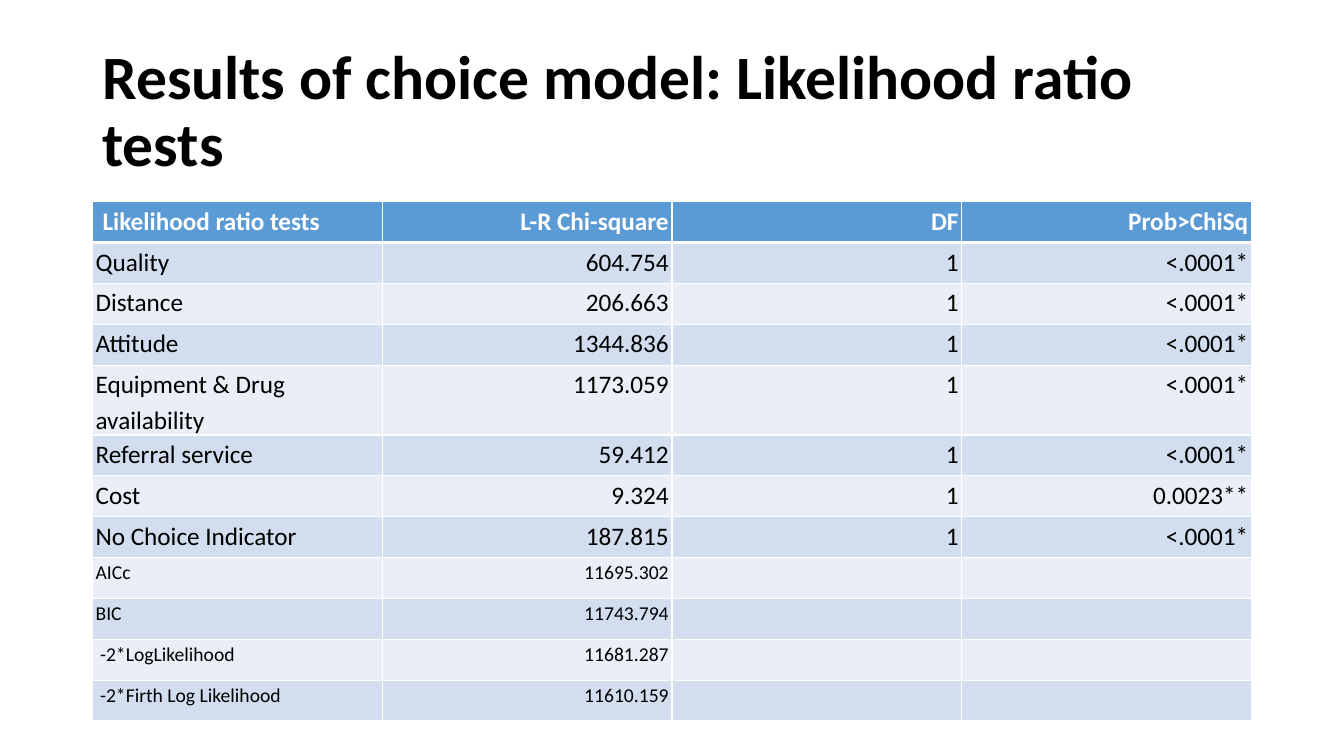
from dataclasses import dataclass

from lxml import etree
from pptx import Presentation
from pptx.dml.color import RGBColor
from pptx.enum.text import MSO_ANCHOR, PP_ALIGN
from pptx.oxml.ns import qn
from pptx.util import Cm, Pt

MIDDLE = MSO_ANCHOR.MIDDLE
LEFT, RIGHT = PP_ALIGN.LEFT, PP_ALIGN.RIGHT


@dataclass(frozen=True)
class Theme:
    font: str = "Calibri"
    ink: str = "000000"
    white: str = "FFFFFF"
    header: str = "5B9BD5"
    bands: tuple = ("D2DEEF", "EAEFF7")
    title_size: int = 44
    body_size: int = 18
    criterion_size: int = 14


THEME = Theme()

HEADINGS = ("Likelihood ratio tests", "L-R Chi-square", "DF", "Prob>ChiSq")
EFFECTS = (
    ("Quality", "604.754", "1", "<.0001*"),
    ("Distance", "206.663", "1", "<.0001*"),
    ("Attitude", "1344.836", "1", "<.0001*"),
    ("Equipment & Drug availability", "1173.059", "1", "<.0001*"),
    ("Referral service", "59.412", "1", "<.0001*"),
    ("Cost", "9.324", "1", "0.0023**"),
    ("No Choice Indicator", "187.815", "1", "<.0001*"),
)
CRITERIA = (
    ("AICc", "11695.302", "", ""),
    ("BIC", "11743.794", "", ""),
    (" -2*LogLikelihood", "11681.287", "", ""),
    (" -2*Firth Log Likelihood", "11610.159", "", ""),
)


def style_paragraph(paragraph, size, color, bold):
    paragraph.font.name = THEME.font
    paragraph.font.size = Pt(size)
    paragraph.font.bold = bold
    paragraph.font.color.rgb = RGBColor.from_string(color)


def add_title(slide, text, left, top, width, height):
    frame = slide.shapes.add_textbox(left, top, width, height).text_frame
    frame.word_wrap = True
    frame.vertical_anchor = MIDDLE
    heading = frame.paragraphs[0]
    heading.text = text
    heading.line_spacing = 0.9
    style_paragraph(heading, THEME.title_size, THEME.ink, True)


def add_borders(cell, bottom_width):
    properties = cell._tc.get_or_add_tcPr()
    for side, width in (("L", 1), ("R", 1), ("T", 1), ("B", bottom_width)):
        line = etree.SubElement(properties, qn(f"a:ln{side}"), w=str(Pt(width)))
        fill = etree.SubElement(line, qn("a:solidFill"))
        etree.SubElement(fill, qn("a:srgbClr"), val=THEME.white)


def fill_cell(cell, text, size, color, band, is_header, alignment):
    add_borders(cell, 3 if is_header else 1)
    cell.fill.solid()
    cell.fill.fore_color.rgb = RGBColor.from_string(band)
    entry = cell.text_frame.paragraphs[0]
    entry.text = text
    entry.alignment = alignment
    style_paragraph(entry, size, color, is_header)
    if text and not (is_header and alignment == LEFT):
        cell.margin_left = cell.margin_right = Cm(0.08)
        cell.margin_top = cell.margin_bottom = 0
        entry.line_spacing = 1.15


def add_results_table(slide, left, top, width, height):
    records = (HEADINGS,) + EFFECTS + CRITERIA
    row_height = Cm(1.03)
    wrapped_row = 4
    table = slide.shapes.add_table(
        len(records), len(HEADINGS), left, top, width, height
    ).table
    for column in table.columns:
        column.width = width // len(HEADINGS)
    for index, record in enumerate(records):
        is_header = index == 0
        table.rows[index].height = row_height
        band = THEME.header if is_header else THEME.bands[(index - 1) % 2]
        color = THEME.white if is_header else THEME.ink
        size = THEME.criterion_size if record in CRITERIA else THEME.body_size
        for position, text in enumerate(record):
            fill_cell(
                table.cell(index, position),
                text,
                size if text else THEME.body_size,
                color,
                band,
                is_header,
                RIGHT if position else LEFT,
            )
    table.rows[wrapped_row].height = height - row_height * (len(records) - 1)


def build_results_slide(presentation):
    slide = presentation.slides.add_slide(presentation.slide_layouts[6])
    left, width = Cm(2.33), Cm(29.21)
    add_title(
        slide,
        "Results of choice model: Likelihood ratio tests",
        left, Cm(1.01), width, Cm(3.68),
    )
    add_results_table(slide, left, Cm(5.08), width, Cm(13.09))


def main():
    presentation = Presentation()
    presentation.slide_width = Cm(33.87)
    presentation.slide_height = Cm(19.05)
    build_results_slide(presentation)
    presentation.save("out.pptx")


if __name__ == "__main__":
    main()
